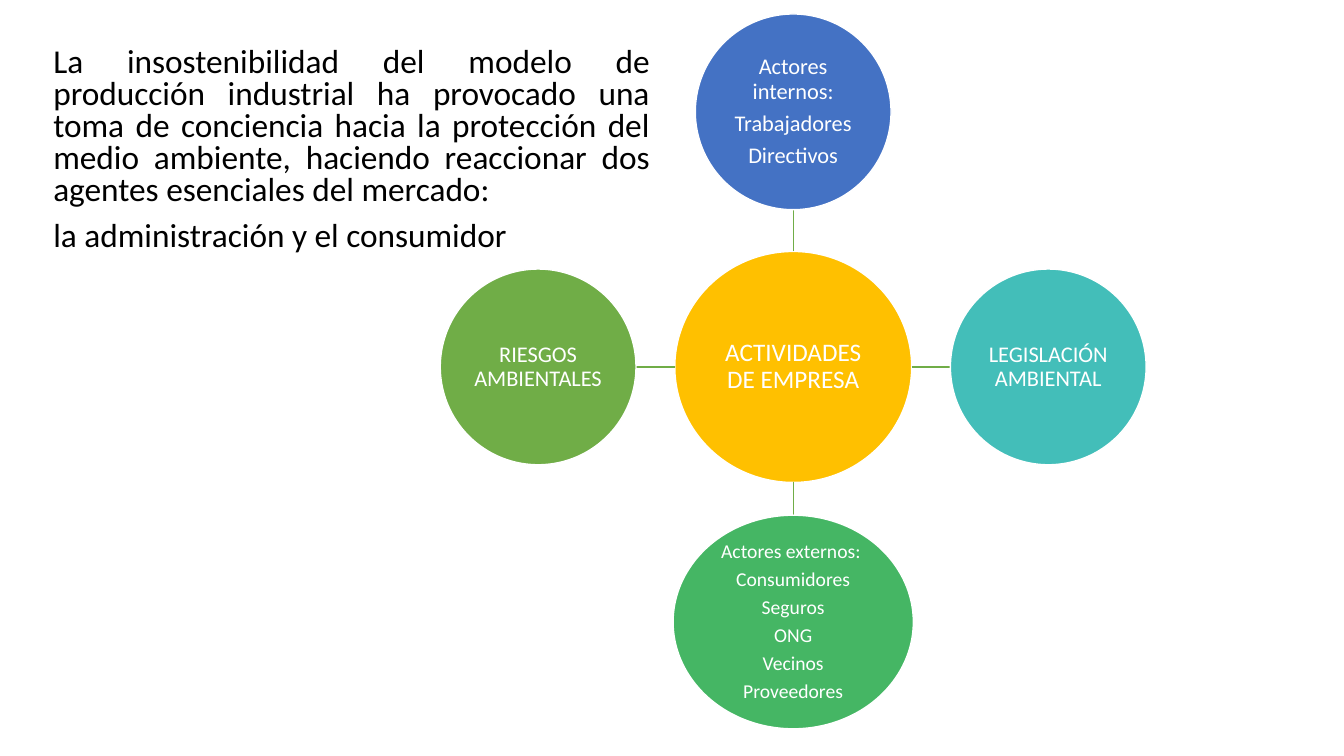
from pptx import Presentation
from pptx.dml.color import RGBColor
from pptx.enum.shapes import MSO_CONNECTOR, MSO_SHAPE
from pptx.enum.text import MSO_ANCHOR, PP_ALIGN
from pptx.util import Pt
from lxml.etree import SubElement
from pptx.oxml.ns import qn

BLACK = RGBColor(0x00, 0x00, 0x00)
WHITE = RGBColor(0xFF, 0xFF, 0xFF)
GOLD = RGBColor(0xFF, 0xC0, 0x00)
BLUE = RGBColor(0x44, 0x72, 0xC4)
TEAL = RGBColor(0x43, 0xBE, 0xB9)
GREEN = RGBColor(0x45, 0xB6, 0x64)
OLIVE = RGBColor(0x70, 0xAD, 0x47)

MID = (566.6, 262.1)
HUB = (169.2, 165)
REACH = 182.2
ROUND = (139.8, 139.8)
WIDE = (171.6, 152.6)

INTRO = [
    "La insostenibilidad del modelo de producción industrial ha provocado una "
    "toma de conciencia hacia la protección del medio ambiente, haciendo "
    "reaccionar dos agentes esenciales del mercado: ",
    "la administración y el consumidor",
]

# Direction from the hub, size, fill, font size, lines of text
NODES = [
    (0, -1, ROUND, BLUE, 16, ["Actores internos:", "Trabajadores", "Directivos"]),
    (1, 0, ROUND, TEAL, 16, ["LEGISLACIÓN AMBIENTAL"]),
    (0, 1, WIDE, GREEN, 14, ["Actores externos: ", "Consumidores", "Seguros",
                             "ONG", "Vecinos", "Proveedores"]),
    (-1, 0, ROUND, OLIVE, 16, ["RIESGOS AMBIENTALES"]),
]


def write(frame, lines, size, color, align, space, before=0, after=0):
    frame.word_wrap = True
    for i, line in enumerate(lines):
        para = frame.paragraphs[0] if i == 0 else frame.add_paragraph()
        para.alignment = align
        para.line_spacing = space
        para.space_before = Pt(before)
        para.space_after = Pt(after)
        run = para.add_run()
        run.text = line
        run.font.name = "Calibri"
        run.font.size = Pt(size)
        run.font.color.rgb = color


class Canvas:
    def __init__(self, slide):
        self.shapes = slide.shapes

    def text(self, x, y, w, h, lines, **style):
        box = self.shapes.add_textbox(Pt(x), Pt(y), Pt(w), Pt(h))
        write(box.text_frame, lines, **style)

    def circle(self, x, y, size, fill, lines, font):
        """Draw an ellipse centred on x, y with its text inside."""
        w, h = size
        oval = self.shapes.add_shape(
            MSO_SHAPE.OVAL, Pt(x - w / 2), Pt(y - h / 2), Pt(w), Pt(h))
        oval.shadow.inherit = False
        oval.fill.solid()
        oval.fill.fore_color.rgb = fill
        oval.line.color.rgb = WHITE
        oval.line.width = Pt(1)
        frame = oval.text_frame
        frame.margin_left = frame.margin_right = Pt(0.8)
        frame.margin_top = frame.margin_bottom = Pt(0.8)
        frame.vertical_anchor = MSO_ANCHOR.MIDDLE
        write(frame, lines, size=font, color=WHITE, align=PP_ALIGN.CENTER,
              space=0.9, after=0.35 * font)

    def link(self, x1, y1, x2, y2):
        line = self.shapes.add_connector(
            MSO_CONNECTOR.STRAIGHT, Pt(x1), Pt(y1), Pt(x2), Pt(y2))
        line.line.color.rgb = OLIVE
        line.line.width = Pt(1)
        SubElement(line._element.spPr, qn("a:effectLst"))


def main():
    deck = Presentation()
    deck.slide_width, deck.slide_height = Pt(960), Pt(540)
    art = Canvas(deck.slides.add_slide(deck.slide_layouts[6]))

    art.text(31, 31, 440, 157.7, INTRO, size=23.8, color=BLACK,
             align=PP_ALIGN.JUSTIFY, space=0.8, before=10)

    cx, cy = MID
    art.circle(cx, cy, HUB, GOLD, ["ACTIVIDADES DE EMPRESA"], 18)
    for dx, dy, size, fill, font, lines in NODES:
        x, y = cx + dx * REACH, cy + dy * REACH
        art.link(cx + dx * HUB[0] / 2, cy + dy * HUB[1] / 2,
                 x - dx * size[0] / 2, y - dy * size[1] / 2)
        art.circle(x, y, size, fill, lines, font)

    deck.save("out.pptx")


if __name__ == "__main__":
    main()
